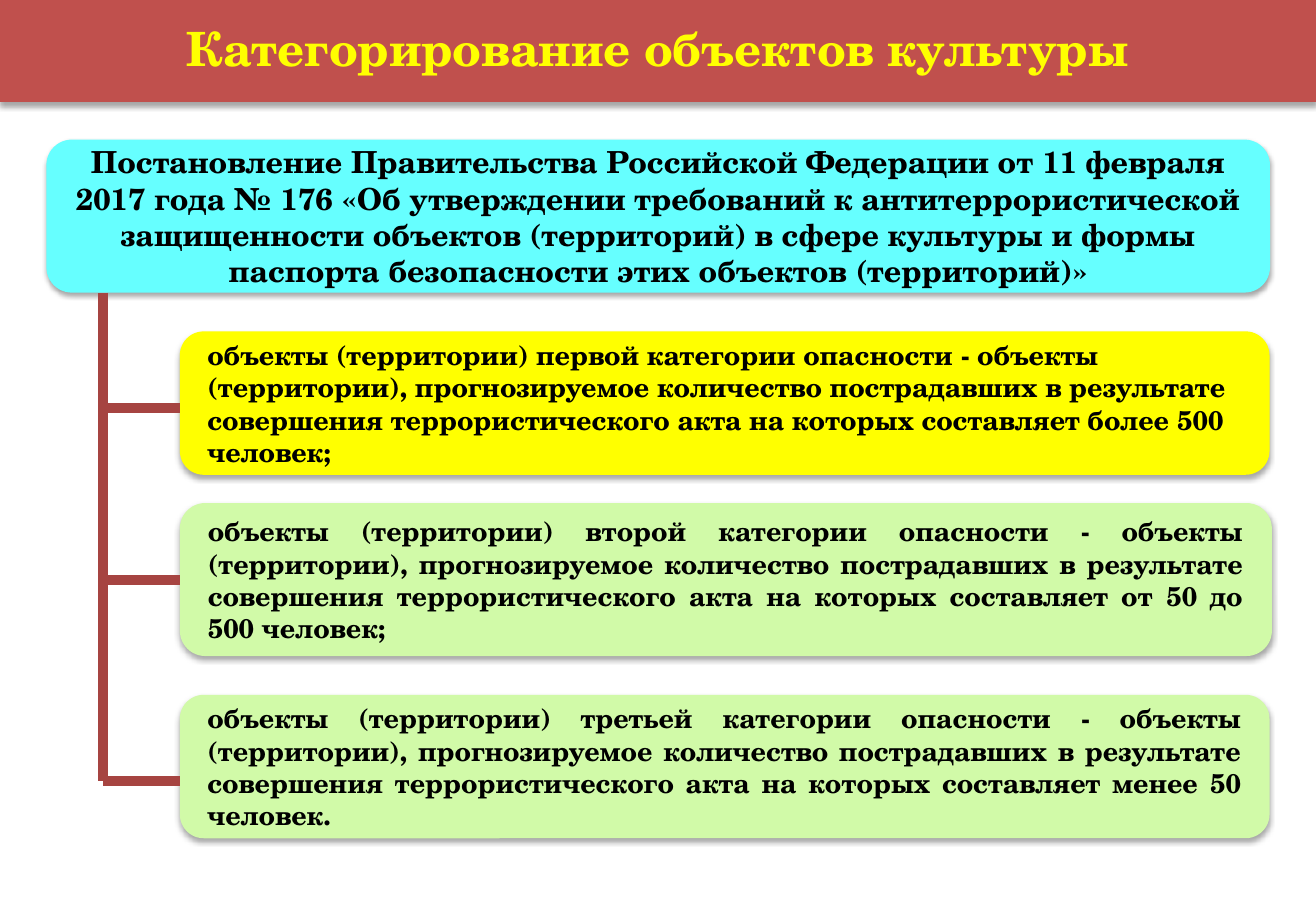
from dataclasses import dataclass

from lxml import etree
from pptx import Presentation
from pptx.dml.color import RGBColor
from pptx.enum import shapes, text
from pptx.oxml import ns
from pptx.util import Cm, Pt


@dataclass(frozen=True)
class Theme:
    font: str = "TeX Gyre Schola"
    red: str = "C0504D"
    line: str = "A64441"
    cyan: str = "66FFFF"
    yellow: str = "FFFF00"
    green: str = "D1FAA8"
    black: str = "000000"
    title: int = 28
    law: int = 18
    body: int = 16
    stroke: int = 6


THEME = Theme()
RECT = shapes.MSO_SHAPE.RECTANGLE
ROUND = shapes.MSO_SHAPE.ROUNDED_RECTANGLE
LEFT, MID, JUST = text.PP_ALIGN.LEFT, text.PP_ALIGN.CENTER, text.PP_ALIGN.JUSTIFY

WIDTH, HEIGHT = 27.51, 19.05
STEM, CARD = 2.16, 3.76
LAW_TOP, LAW_TALL = 2.92, 3.2

LAW = (
    "Постановление Правительства Российской Федерации от 11 февраля 2017 года № 176 "
    "«Об утверждении требований к антитеррористической защищенности объектов (территорий) "
    "в сфере культуры и формы паспорта безопасности этих объектов (территорий)»"
)
CLASS = (
    "объекты (территории) {} категории опасности - объекты (территории), "
    "прогнозируемое количество пострадавших в результате совершения "
    "террористического акта на которых составляет {}"
)
# order, limit, fill, alignment, top, width, height, branch level
CARDS = [
    ("первой", "более 500 человек;", THEME.yellow, LEFT, 6.93, 22.78, 3.0, 8.53),
    ("второй", "от 50 до 500 человек;", THEME.green, JUST, 10.52, 22.83, 3.2, 12.12),
    ("третьей", "менее 50 человек.", THEME.green, JUST, 14.53, 22.78, 3.0, 16.33),
]


def add_shade(shape, drop):
    """Give the shape a soft shadow that falls straight down by drop points."""
    shape.shadow.inherit = False
    effects = shape._element.spPr.find(ns.qn("a:effectLst"))
    shade = etree.SubElement(
        effects, ns.qn("a:outerShdw"), blurRad=str(Pt(3.1)), dist=str(Pt(drop)),
        dir="5400000", rotWithShape="0")
    color = etree.SubElement(shade, ns.qn("a:srgbClr"), val=THEME.black)
    etree.SubElement(color, ns.qn("a:alpha"), val="35000")


def add_box(slide, kind, place, fill, words, size, align=MID, color=THEME.black,
            pads=(0.43, 0.43, 0.43, 0.43), drop=1.8):
    """Add a filled box with text; place and pads (left, top, right, bottom) in cm."""
    box = slide.shapes.add_shape(kind, *map(Cm, place))
    box.fill.solid()
    box.fill.fore_color.rgb = RGBColor.from_string(fill)
    box.line.fill.background()
    add_shade(box, drop)
    frame = box.text_frame
    frame.word_wrap = True
    frame.vertical_anchor = text.MSO_ANCHOR.MIDDLE
    (frame.margin_left, frame.margin_top,
     frame.margin_right, frame.margin_bottom) = map(Cm, pads)
    frame.text = words
    para = frame.paragraphs[0]
    para.alignment = align
    font = para.runs[0].font
    font.name, font.size, font.bold = THEME.font, Pt(size), True
    font.color.rgb = RGBColor.from_string(color)
    return box


def add_line(slide, *ends):
    line = slide.shapes.add_connector(shapes.MSO_CONNECTOR.STRAIGHT, *map(Cm, ends))
    line.line.width = Pt(THEME.stroke)
    line.line.color.rgb = RGBColor.from_string(THEME.line)
    etree.SubElement(line._element.spPr, ns.qn("a:effectLst"))
    return line


def add_card(slide, order, limit, fill, align, top, wide, tall, level):
    """Add a category card and the branch that leads to it from the stem."""
    card = add_box(slide, ROUND, (CARD, top, wide, tall), fill,
                   CLASS.format(order, limit), THEME.body, align)
    branch = add_line(slide, STEM, level, CARD, level)
    if abs(top + tall / 2 - level) < 0.01:
        branch.end_connect(card, 1)


def main():
    deck = Presentation()
    deck.slide_width, deck.slide_height = Cm(WIDTH), Cm(HEIGHT)
    slide = deck.slides.add_slide(deck.slide_layouts[6])
    add_box(slide, RECT, (0, 0, WIDTH, 2.13), THEME.red,
            "Категорирование объектов культуры", THEME.title, color=THEME.yellow,
            pads=(0.28, 0, 0.28, 0.15), drop=3)
    add_box(slide, ROUND, (0.97, LAW_TOP, 25.58, LAW_TALL), THEME.cyan, LAW, THEME.law)
    add_line(slide, STEM, LAW_TOP + LAW_TALL, STEM, CARDS[-1][-1])
    for card in CARDS:
        add_card(slide, *card)
    deck.save("out.pptx")


if __name__ == "__main__":
    main()
